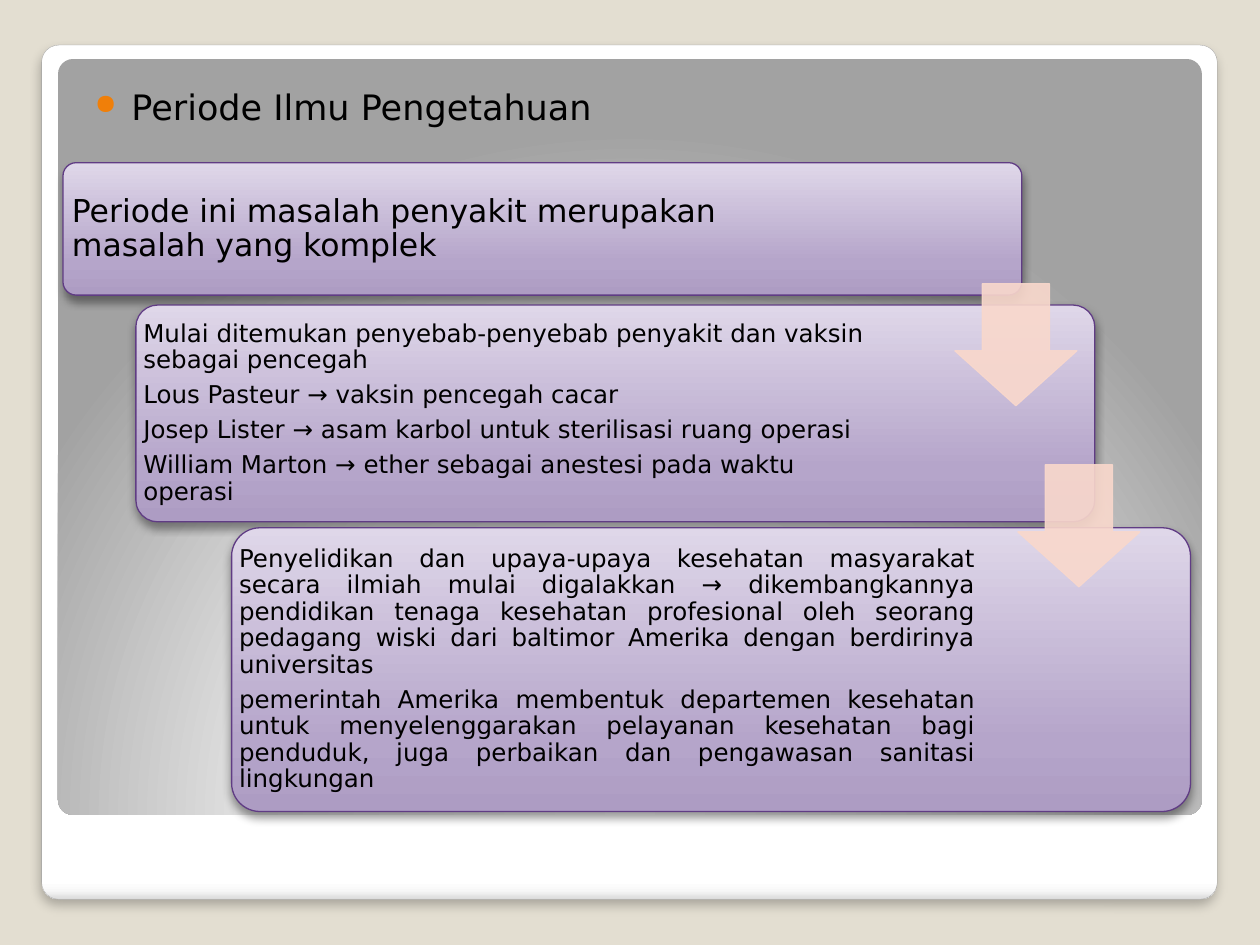
from lxml import etree
from pptx import Presentation
from pptx import util as u
from pptx.dml.color import RGBColor
from pptx.enum import shapes, text
from pptx.oxml import ns

FONT = "DejaVu Sans"
COLORS = {
    "background": "E3DED1", "frame_edge": "A4A4A4", "card_edge": "603C84",
    "arrow": "F9D8CC", "bullet": "F07F09", "ink": "000000",
}
FRAME_STOPS = [(0, "FFFFFF"), (98, "FFFFFF"), (99, "F7F7F7"), (100, "DADADA")]
PANEL_STOPS = [(0, "FFFFFF"), (55, "E1E1E1"), (100, "A2A2A2")]
CARD_STOPS = [(0, "AD9CC3"), (25, "B5A5CA"), (100, "DFD7E9")]
CARD_WIDTH = 19.33
ARROW_SIZE = 2.46
PERIODS = [
    {"box": (1.27, 3.28, 2.67), "text_width": 15.44, "size": 18, "inset": 0.18,
     "align": text.PP_ALIGN.LEFT,
     "lines": ["Periode ini masalah penyakit merupakan masalah yang komplek"]},
    {"box": (2.74, 6.15, 4.37), "text_width": 15.14, "size": 14, "inset": 0.15,
     "align": text.PP_ALIGN.LEFT,
     "lines": ["Mulai ditemukan penyebab-penyebab penyakit dan vaksin sebagai pencegah",
               "Lous Pasteur → vaksin pencegah cacar",
               "Josep Lister → asam karbol untuk sterilisasi ruang operasi",
               "William Marton → ether sebagai anestesi pada waktu operasi"]},
    {"box": (4.67, 10.64, 5.72), "text_width": 15.14, "size": 14, "inset": 0.15,
     "align": text.PP_ALIGN.JUSTIFY,
     "lines": ["Penyelidikan dan upaya-upaya kesehatan masyarakat secara ilmiah mulai "
               "digalakkan → dikembangkannya pendidikan tenaga kesehatan profesional oleh "
               "seorang pedagang wiski dari baltimor Amerika dengan berdirinya universitas",
               "pemerintah Amerika membentuk departemen kesehatan untuk menyelenggarakan "
               "pelayanan kesehatan bagi penduduk, juga perbaikan dan pengawasan sanitasi "
               "lingkungan"]},
]
ARROWS = [(19.25, 5.72), (20.52, 9.37)]


def rgb(name):
    """Return the named colour."""
    return RGBColor.from_string(COLORS[name])


def add_node(parent, tag, **attributes):
    """Append a DrawingML element with the given attributes."""
    node = etree.SubElement(parent, ns.qn(tag))
    for key, value in attributes.items():
        node.set(key, str(value))
    return node


def add_color(parent, color, opacity):
    """Append a colour with an opacity in percent."""
    add_node(add_node(parent, "a:srgbClr", val=color), "a:alpha", val=opacity * 1000)


def set_gradient(shape, stops, angle=None):
    """Fill a shape with a linear gradient, or a circular one without an angle."""
    shape.fill.background()
    empty = shape._element.spPr.find(ns.qn("a:noFill"))
    gradient = etree.Element(ns.qn("a:gradFill"), rotWithShape="1")
    stop_list = add_node(gradient, "a:gsLst")
    for position, color in stops:
        add_color(add_node(stop_list, "a:gs", pos=position * 1000), color, 100)
    if angle is None:
        circle = add_node(gradient, "a:path", path="circle")
        add_node(circle, "a:fillToRect", l=50000, t=175000, r=50000, b=-75000)
    else:
        add_node(gradient, "a:lin", ang=angle * 60000, scaled=0)
    empty.getparent().replace(empty, gradient)


def set_shadow(shape, opacity, blur, distance):
    """Cast a black shadow straight down."""
    effects = shape._element.spPr.find(ns.qn("a:effectLst"))
    shadow = add_node(effects, "a:outerShdw", blurRad=u.Pt(blur), dist=u.Pt(distance),
                      dir=90 * 60000, algn="t", rotWithShape=0)
    add_color(shadow, COLORS["ink"], opacity)


def add_panel(slide, box, radius, stops, angle=None, edge=None, edge_width=0.75):
    """Add a rounded panel with a gradient."""
    panel = slide.shapes.add_shape(shapes.MSO_SHAPE.ROUNDED_RECTANGLE, *map(u.Cm, box))
    panel.shadow.inherit = False
    panel.adjustments[0] = radius
    set_gradient(panel, stops, angle)
    if edge:
        panel.line.color.rgb = rgb(edge)
        panel.line.width = u.Pt(edge_width)
    else:
        panel.line.fill.background()
    return panel


def add_text(slide, box, lines, size, insets, anchor):
    """Add a wrapped text box and return its frame."""
    frame = slide.shapes.add_textbox(*map(u.Cm, box)).text_frame
    frame.word_wrap = True
    frame.vertical_anchor = anchor
    (frame.margin_left, frame.margin_top,
     frame.margin_right, frame.margin_bottom) = map(u.Cm, insets)
    frame.text = "\n".join(lines)
    for paragraph in frame.paragraphs:
        for run in paragraph.runs:
            run.font.name = FONT
            run.font.size = u.Pt(size)
            run.font.color.rgb = rgb("ink")
    return frame


def add_heading(slide):
    """Add the bulleted heading."""
    frame = add_text(slide, (1.4, 1.47, 22.73, 11.63), ["Periode Ilmu Pengetahuan"], 20,
                     (0.51, 0.25, 0.25, 0.13), text.MSO_ANCHOR.TOP)
    heading = frame.paragraphs[0]
    heading.space_before = u.Pt(2.5)
    properties = heading._p.get_or_add_pPr()
    properties.set("marL", str(u.Cm(0.74)))
    properties.set("indent", str(u.Cm(-0.74)))
    add_color(add_node(properties, "a:buClr"), COLORS["bullet"], 100)
    add_node(properties, "a:buSzPct", val=80000)
    add_node(properties, "a:buChar", char="●")


def add_period(slide, period):
    """Add one step of the staircase with its text."""
    left, top, height = period["box"]
    card = add_panel(slide, (left, top, CARD_WIDTH, height), 0.1, CARD_STOPS, 270, "card_edge")
    set_shadow(card, 40, 5.2, 3)
    frame = add_text(slide, (left, top, period["text_width"], height), period["lines"],
                     period["size"], [period["inset"]] * 4, text.MSO_ANCHOR.MIDDLE)
    for paragraph in frame.paragraphs:
        paragraph.alignment = period["align"]
        paragraph.line_spacing = 0.9
        paragraph.space_after = u.Pt(0.35 * period["size"])


def add_arrow(slide, left, top):
    """Add a translucent arrow leading to the next step."""
    arrow = slide.shapes.add_shape(shapes.MSO_SHAPE.DOWN_ARROW, u.Cm(left), u.Cm(top),
                                   u.Cm(ARROW_SIZE), u.Cm(ARROW_SIZE))
    arrow.shadow.inherit = False
    arrow.adjustments[0] = 0.55
    arrow.adjustments[1] = 0.45
    arrow.fill.solid()
    arrow.fill.fore_color.rgb = rgb("arrow")
    arrow.line.color.rgb = rgb("arrow")
    arrow.line.width = u.Pt(0.75)
    for color in arrow._element.spPr.iter(ns.qn("a:srgbClr")):
        add_node(color, "a:alpha", val=90000)


def main():
    """Build the slide and save it."""
    deck = Presentation()
    deck.slide_width, deck.slide_height = u.Cm(25.4), u.Cm(19.05)
    slide = deck.slides.add_slide(deck.slide_layouts[6])
    slide.background.fill.solid()
    slide.background.fill.fore_color.rgb = rgb("background")
    frame = add_panel(slide, (0.84, 0.91, 23.7, 17.22), 0.02, FRAME_STOPS, 90,
                      "frame_edge", 0.16)
    set_shadow(frame, 25, 6, 4)
    add_panel(slide, (1.17, 1.19, 23.06, 15.24), 0.02, PANEL_STOPS)
    add_heading(slide)
    for period in PERIODS:
        add_period(slide, period)
    for left, top in ARROWS:
        add_arrow(slide, left, top)
    deck.save("out.pptx")


if __name__ == "__main__":
    main()
